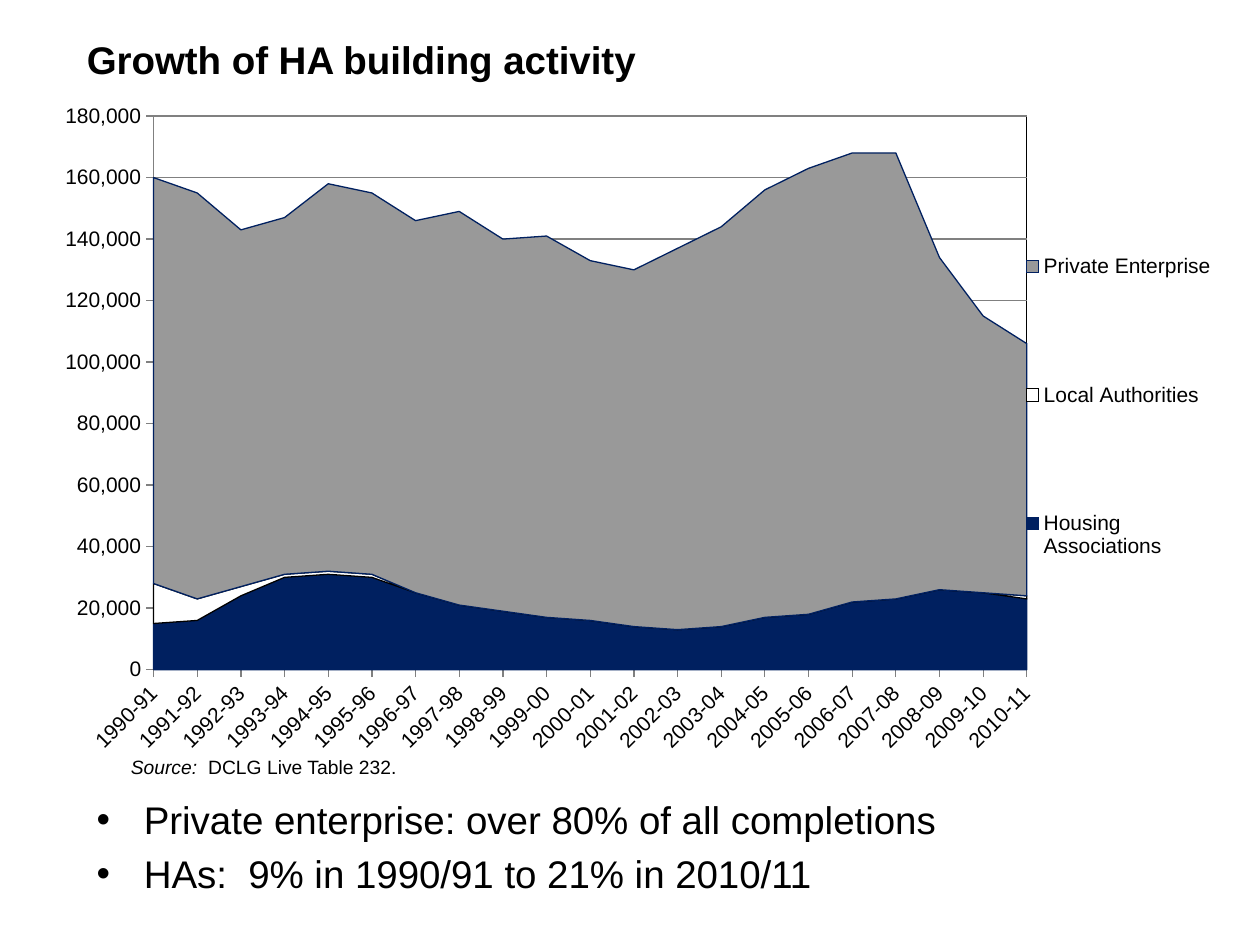
"""Build a slide on housing association building activity with a stacked area chart."""
from dataclasses import dataclass
from lxml.etree import SubElement
from pptx import Presentation
from pptx.chart.data import CategoryChartData
from pptx.dml.color import RGBColor as RGB
from pptx.enum.chart import XL_CHART_TYPE as CT, XL_LEGEND_POSITION as LP, XL_TICK_MARK as TM
from pptx.enum.text import MSO_ANCHOR as ANCHOR, PP_ALIGN as ALIGN
from pptx.oxml import parse_xml
from pptx.oxml.ns import nsdecls, qn
from pptx.util import Cm, Pt


@dataclass(frozen=True)
class Theme:
    font: str = "Arial"
    black: RGB = RGB(0, 0, 0)
    white: RGB = RGB(255, 255, 255)
    navy: RGB = RGB(0, 0x20, 0x60)
    grey: RGB = RGB(0x99, 0x99, 0x99)
    axis: RGB = RGB(0x80, 0x80, 0x80)
    large: Pt = Pt(22)
    chart: Pt = Pt(12)
    small: Pt = Pt(11)
    line: Pt = Pt(0.75)


T = Theme()


def add_run(p, text, size, bold=False, italic=False):
    r = p.add_run()
    r.text = text
    f = r.font
    f.name, f.size, f.bold, f.italic = T.font, size, bold, italic
    f.color.rgb = T.black


def set_layout(parent, index, x, y, w, h, inner=False):
    for old in parent.findall(qn("c:layout")):
        parent.remove(old)
    target = '<c:layoutTarget val="inner"/>' if inner else ""
    parent.insert(index, parse_xml(
        f'<c:layout {nsdecls("c")}><c:manualLayout>{target}'
        '<c:xMode val="edge"/><c:yMode val="edge"/>'
        f'<c:x val="{x}"/><c:y val="{y}"/><c:w val="{w}"/><c:h val="{h}"/>'
        '</c:manualLayout></c:layout>'))


prs = Presentation()
prs.slide_width, prs.slide_height = Cm(25.4), Cm(19.05)
s = prs.slides.add_slide(prs.slide_layouts[6])

series = [
    ("Housing Associations", T.navy, T.navy,
     [15, 16, 24, 30, 31, 30, 25, 21, 19, 17, 16, 14, 13, 14, 17, 18, 22, 23, 26, 25, 23]),
    ("Local Authorities", T.white, T.black,
     [13, 7, 3, 1, 1, 1] + [0] * 14 + [1]),
    ("Private Enterprise", T.grey, T.navy,
     [132, 132, 116, 116, 126, 124, 121, 128, 121, 124, 117,
      116, 124, 130, 139, 145, 146, 145, 108, 90, 82]),
]
data = CategoryChartData()
data.categories = [f"{year}-{(year + 1) % 100:02d}" for year in range(1990, 2011)]
for name, fill, line, thousands in series:
    data.add_series(name, [v * 1000 for v in thousands])

chart = s.shapes.add_chart(CT.AREA_STACKED, Cm(1.09), Cm(1.73), Cm(23.6), Cm(14.2), data).chart
chart.has_title = False
chart.font.name, chart.font.size, chart.font.color.rgb = T.font, T.chart, T.black
for ser, (name, fill, line, thousands) in zip(chart.plots[0].series, series):
    ser.format.fill.solid()
    ser.format.fill.fore_color.rgb = fill
    ser.format.line.color.rgb = line
    ser.format.line.width = T.line

cat, val = chart.category_axis, chart.value_axis
val.minimum_scale, val.maximum_scale, val.major_unit = 0, 180000, 20000
val.has_major_gridlines, cat.has_major_gridlines = True, False
val.tick_labels.number_format = r"[$-10409]#,##0;\(#,##0\)"
val.tick_labels.number_format_is_linked = False
for part in (cat, val, val.major_gridlines):
    part.format.line.color.rgb = T.axis
    part.format.line.width = T.line
for axis in (cat, val):
    axis.major_tick_mark, axis.minor_tick_mark = TM.OUTSIDE, TM.NONE
    axis.tick_labels.font.size = T.chart
cat._element.find(qn("c:txPr")).find(qn("a:bodyPr")).set("rot", "-2700000")
val._element.find(qn("c:crossBetween")).set("val", "midCat")

plot = chart._chartSpace.chart.plotArea
set_layout(plot, 0, 0.085, 0.043, 0.746, 0.786, inner=True)
plot.append(parse_xml(
    f'<c:spPr {nsdecls("c", "a")}><a:noFill/><a:ln w="{T.line}"><a:solidFill>'
    f'<a:srgbClr val="{T.black}"/></a:solidFill></a:ln></c:spPr>'))
chart.has_legend = True
legend = chart.legend
legend.position, legend.include_in_layout = LP.RIGHT, False
legend.font.size = T.chart
set_layout(legend._element, 1, 0.84, 0.09, 0.16, 0.73)

tf = s.shapes.add_textbox(Cm(1.5), Cm(0), Cm(21.6), Cm(2.4)).text_frame
tf.word_wrap, tf.vertical_anchor = True, ANCHOR.MIDDLE
add_run(tf.paragraphs[0], "Growth of HA building activity", T.large, bold=True)

tf = s.shapes.add_textbox(Cm(2.31), Cm(15.11), Cm(5.94), Cm(0.74)).text_frame
tf.word_wrap = False
p = tf.paragraphs[0]
p.alignment = ALIGN.RIGHT
add_run(p, "Source:  ", T.small, italic=True)
add_run(p, "DCLG Live Table 232.", T.small)

tf = s.shapes.add_textbox(Cm(1.7), Cm(15.93), Cm(20), Cm(2.34)).text_frame
tf.word_wrap = True
bullets = ["Private enterprise: over 80% of all completions",
           "HAs:  9% in 1990/91 to 21% in 2010/11"]
for i, text in enumerate(bullets):
    p = tf.add_paragraph() if i else tf.paragraphs[0]
    pPr = p._p.get_or_add_pPr()
    pPr.set("marL", str(Cm(0.95)))
    pPr.set("indent", str(-Cm(0.95)))
    SubElement(SubElement(pPr, qn("a:spcBef")), qn("a:spcPct")).set("val", "20000")
    SubElement(pPr, qn("a:buFont")).set("typeface", T.font)
    SubElement(pPr, qn("a:buChar")).set("char", "•")
    add_run(p, text, T.large)

prs.save("out.pptx")
